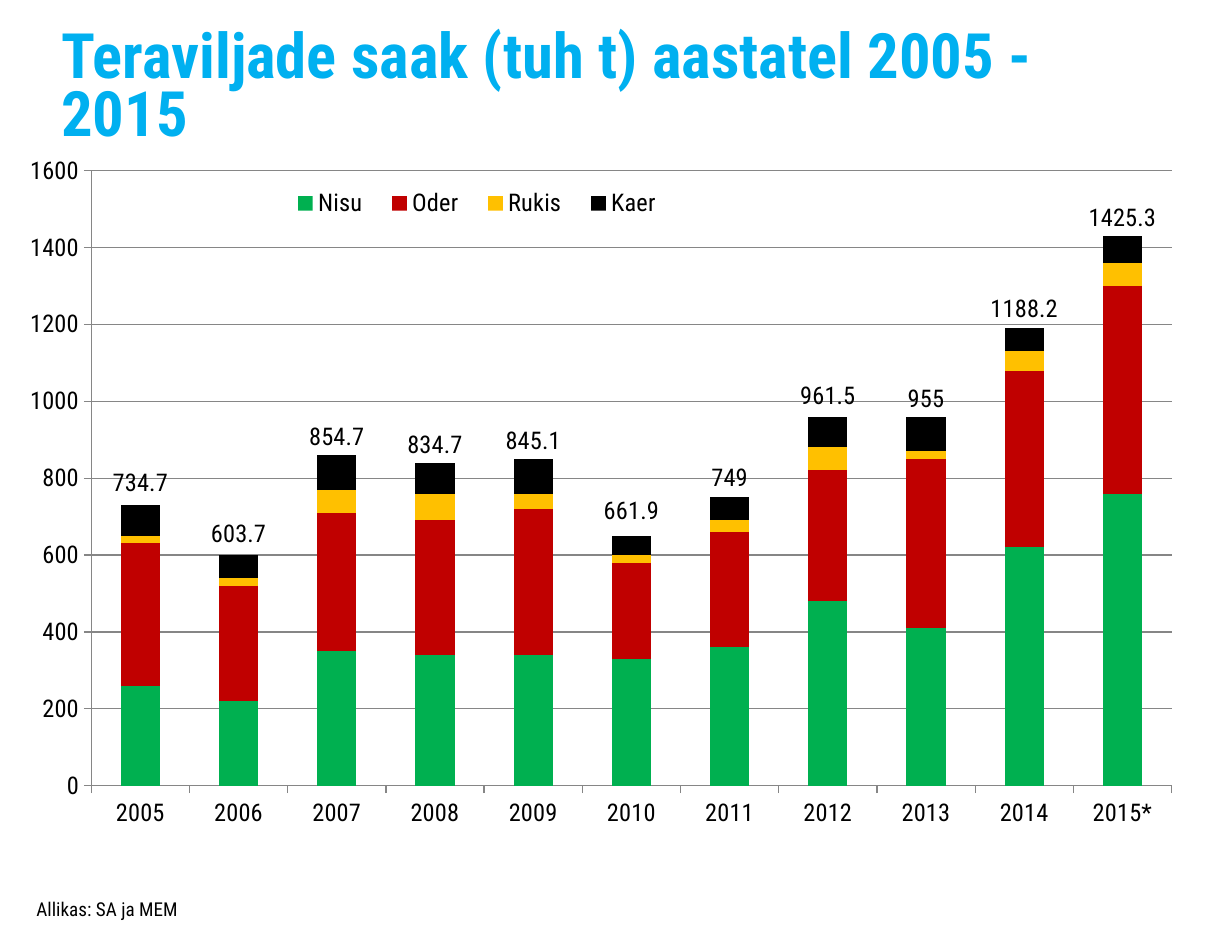
"""Build a slide with a stacked chart of grain harvest by year, with totals."""
from dataclasses import dataclass

from pptx import Presentation
from pptx.chart.chart import Chart
from pptx.chart.data import CategoryChartData as Data
from pptx.dml.color import RGBColor as Rgb
from pptx.enum.chart import XL_CHART_TYPE as Kind
from pptx.enum.chart import XL_LABEL_POSITION as Spot
from pptx.enum.chart import XL_LEGEND_POSITION as Side
from pptx.enum.chart import XL_MARKER_STYLE as Mark
from pptx.enum.chart import XL_TICK_MARK as Tick
from pptx.enum.text import MSO_ANCHOR as Anchor
from pptx.oxml import parse_xml
from pptx.oxml.ns import nsdecls, qn
from pptx.util import Cm, Inches, Pt

FONT = "Roboto Condensed"
HUES = {"title": "00B0F0", "text": "000000", "grid": "868686", "wheat": "00B050",
        "barley": "C00000", "rye": "FFC000", "oats": "000000"}
WIDE, HIGH = Cm(25), Cm(19)
YEARS = [str(year) for year in range(2005, 2015)] + ["2015*"]
TOTALS = [734.7, 603.7, 854.7, 834.7, 845.1, 661.9, 749, 961.5, 955, 1188.2, 1425.3]


@dataclass(frozen=True)
class Box:
    left: float
    top: float
    wide: float
    high: float

    def place(self) -> tuple[int, ...]:
        shares = ((self.left, WIDE), (self.top, HIGH), (self.wide, WIDE), (self.high, HIGH))
        return tuple(int(size * share / 100) for share, size in shares)


@dataclass(frozen=True)
class Crop:
    name: str
    hue: str
    yields: list[float]


CROPS = [
    Crop("Nisu", "wheat", [260, 220, 350, 340, 340, 330, 360, 480, 410, 620, 760]),
    Crop("Oder", "barley", [370, 300, 360, 350, 380, 250, 300, 340, 440, 460, 540]),
    Crop("Rukis", "rye", [20, 20, 60, 70, 40, 20, 30, 60, 20, 50, 60]),
    Crop("Kaer", "oats", [80, 60, 90, 80, 90, 50, 60, 80, 90, 60, 70]),
]


def tint(hue: str) -> Rgb:
    return Rgb.from_string(HUES[hue])


def write(slide, text: str, box: Box, *, size: float, hue: str, bold: bool = False,
          space: float = 1, anchor=Anchor.TOP, pad: tuple[float, float] = (0, 0)) -> None:
    frame = slide.shapes.add_textbox(*box.place()).text_frame
    frame.word_wrap, frame.vertical_anchor = True, anchor
    frame.margin_left = frame.margin_right = Inches(pad[0])
    frame.margin_top = frame.margin_bottom = Inches(pad[1])
    para = frame.paragraphs[0]
    para.line_spacing = space
    run = para.add_run()
    run.text = text
    run.font.name, run.font.size, run.font.bold = FONT, Pt(size), bold
    run.font.color.rgb = tint(hue)


def layout(parent, spot: int, box: Box, inner: bool = False) -> None:
    for old in parent.findall(qn("c:layout")):
        parent.remove(old)
    target = '<c:layoutTarget val="inner"/>' if inner else ""
    modes = "".join(f'<c:{key}Mode val="edge"/>' for key in "xy")
    pairs = zip("xywh", (box.left, box.top, box.wide, box.high))
    sizes = "".join(f'<c:{key} val="{share / 100:.4f}"/>' for key, share in pairs)
    parent.insert(spot, parse_xml(
        f'<c:layout {nsdecls("c")}><c:manualLayout>{target}{modes}{sizes}'
        "</c:manualLayout></c:layout>"))


def split(chart: Chart) -> None:
    """Move the last series from the bars to a line plot on the same axes."""
    bars = chart.plots[0]._element
    line = parse_xml(f'<c:lineChart {nsdecls("c")}><c:grouping val="standard"/>'
                     '<c:varyColors val="0"/></c:lineChart>')
    last = bars.findall(qn("c:ser"))[-1]
    for flag in last.findall(qn("c:invertIfNegative")):
        last.remove(flag)
    line.append(last)
    line.append(parse_xml(f'<c:marker {nsdecls("c")} val="1"/>'))
    for axis in bars.findall(qn("c:axId")):
        line.append(parse_xml(f'<c:axId {nsdecls("c")} val="{axis.get("val")}"/>'))
    bars.addnext(line)


def style(chart: Chart) -> None:
    chart.has_title = False
    chart.font.name, chart.font.size = FONT, Pt(14)
    chart.font.color.rgb = tint("text")
    bars = chart.plots[0]
    bars.gap_width, bars.overlap, bars.vary_by_categories = 150, 100, False
    for crop, series in zip(CROPS, bars.series):
        series.format.fill.solid()
        series.format.fill.fore_color.rgb = tint(crop.hue)

    split(chart)
    total = chart.plots[1].series[0]
    total.smooth = False
    total.marker.style = Mark.NONE
    total.format.line.fill.background()
    total.data_labels.show_value = True
    total.data_labels.position = Spot.ABOVE

    rule = chart.value_axis
    rule.minimum_scale, rule.maximum_scale, rule.major_unit = 0, 1600, 200
    rule.has_major_gridlines = True
    for axis in (rule, chart.category_axis):
        axis.major_tick_mark, axis.minor_tick_mark = Tick.OUTSIDE, Tick.NONE
    for part in (rule, chart.category_axis, rule.major_gridlines):
        part.format.line.color.rgb = tint("grid")
        part.format.line.width = Pt(0.75)

    chart.has_legend = True
    key = chart.legend
    key.position, key.include_in_layout = Side.TOP, True
    node = key._element
    layout(node, 1, Box(21, 5.7, 34, 5))
    node.insert(1, parse_xml(f'<c:legendEntry {nsdecls("c")}><c:idx val="{len(CROPS)}"/>'
                             '<c:delete val="1"/></c:legendEntry>'))
    layout(bars._element.getparent(), 0, Box(5.3, 3.7, 91.6, 84.6), inner=True)


def main() -> None:
    deck = Presentation()
    deck.slide_width, deck.slide_height = WIDE, HIGH
    slide = deck.slides.add_slide(deck.slide_layouts[6])
    write(slide, "Teraviljade saak (tuh t) aastatel 2005 - 2015", Box(4.98, 3.95, 90.04, 11.36),
          size=36, hue="title", bold=True, space=0.77, anchor=Anchor.MIDDLE)
    write(slide, "Allikas: SA ja MEM", Box(1.95, 95, 22.05, 4.01),
          size=11, hue="text", space=1.1, pad=(0.1, 0.05))
    data = Data()
    data.categories = YEARS
    for crop in CROPS:
        data.add_series(crop.name, crop.yields)
    data.add_series("Series 5", TOTALS)
    place = Box(2.34, 15.37, 95.73, 77.67).place()
    style(slide.shapes.add_chart(Kind.COLUMN_STACKED, *place, data).chart)
    deck.save("out.pptx")


if __name__ == "__main__":
    main()
